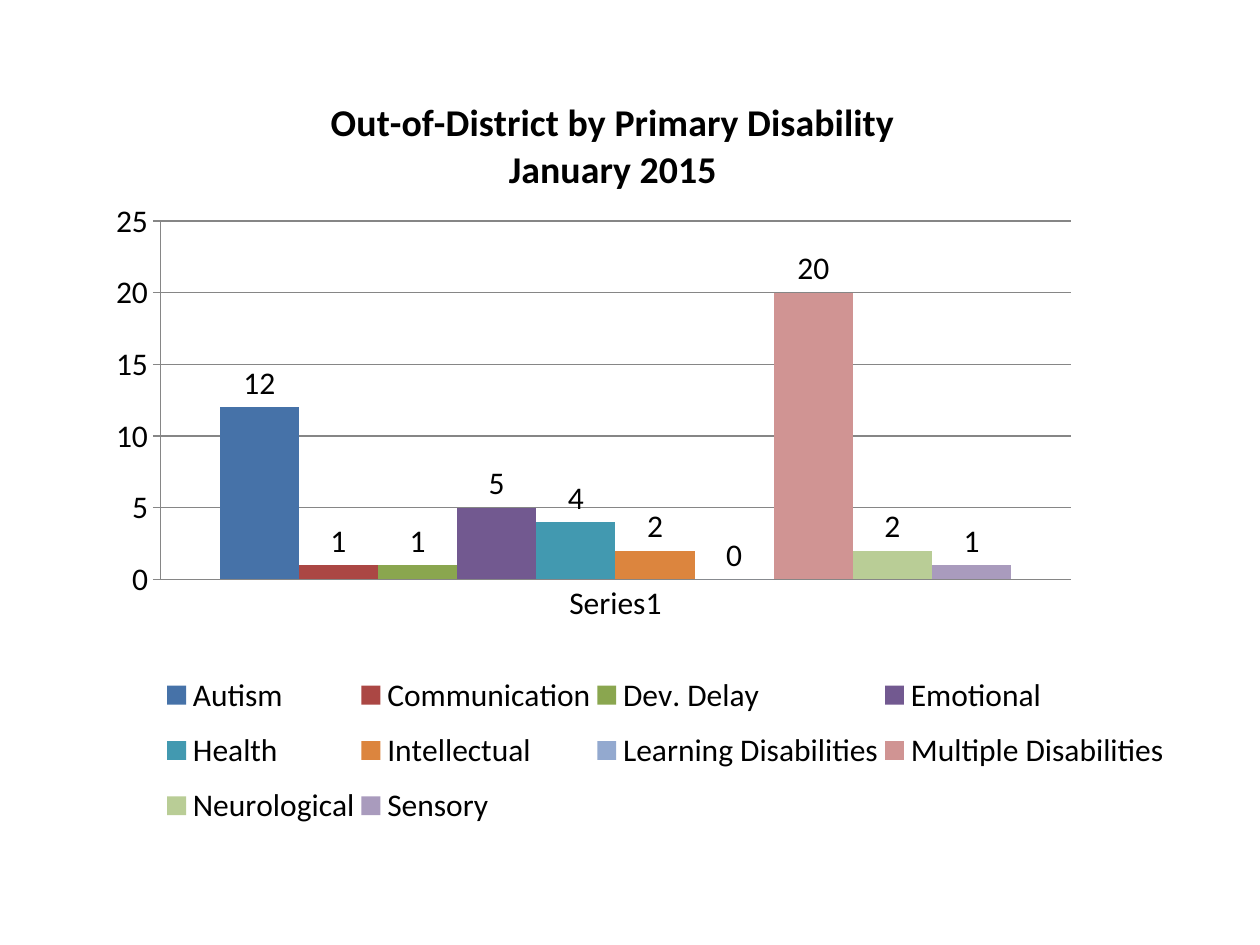
"""Build a slide with a column chart of out-of-district placements by primary disability."""
import lxml.etree
import pptx
import pptx.chart.data
import pptx.dml.color
import pptx.enum.chart
import pptx.oxml.ns
import pptx.util

FONT = "Calibri"
COLORS = {"text": "000000", "line": "868686"}
TITLE_LINES = ["Out-of-District by Primary Disability", "January 2015"]
CATEGORY = "Series1"
DISABILITIES = [
    ("Autism", 12, "4672A8"),
    ("Communication", 1, "AB4744"),
    ("Dev. Delay", 1, "8AA64F"),
    ("Emotional", 5, "725990"),
    ("Health", 4, "4299B0"),
    ("Intellectual", 2, "DC853E"),
    ("Learning Disabilities", 0, "93A9CF"),
    ("Multiple Disabilities", 20, "D09493"),
    ("Neurological", 2, "B9CD96"),
    ("Sensory", 1, "A99BBD"),
]
CHART_AREA = (0.48, 0.49, 8.81, 6.32)
TITLE_LAYOUT = {"xMode": "edge", "yMode": "edge", "x": 0.24, "y": 0.04}
PLOT_LAYOUT = {"layoutTarget": "inner", "xMode": "edge", "yMode": "edge",
               "x": 0.09, "y": 0.2, "w": 0.82, "h": 0.45}
LEGEND_LAYOUT = {"xMode": "edge", "yMode": "edge", "x": 0.09, "y": 0.75, "w": 0.91, "h": 0.23}


def rgb(value):
    return pptx.dml.color.RGBColor.from_string(value)


def style_font(font, size, bold=False):
    font.name = FONT
    font.size = pptx.util.Pt(size)
    font.bold = bold
    font.color.rgb = rgb(COLORS["text"])


def write_line(para, text, **style):
    span = para.add_run()
    span.text = text
    style_font(span.font, **style)


def style_line(line):
    line.color.rgb = rgb(COLORS["line"])
    line.width = pptx.util.Pt(0.75)


def set_layout(element, index, settings):
    qn = pptx.oxml.ns.qn
    for old in element.findall(qn("c:layout")):
        element.remove(old)
    layout = lxml.etree.Element(qn("c:layout"))
    manual = lxml.etree.SubElement(layout, qn("c:manualLayout"))
    for name, value in settings.items():
        lxml.etree.SubElement(manual, qn("c:" + name)).set("val", str(value))
    element.insert(index, layout)


def add_title(chart):
    frame = chart.chart_title.text_frame
    for number, text in enumerate(TITLE_LINES):
        para = frame.add_paragraph() if number else frame.paragraphs[0]
        write_line(para, text, size=21.6, bold=True)
    chart.chart_title.include_in_layout = False
    set_layout(chart.chart_title._element, 1, TITLE_LAYOUT)


def style_axes(chart):
    marks = pptx.enum.chart.XL_TICK_MARK
    chart.category_axis.major_tick_mark = marks.NONE
    chart.category_axis.has_major_gridlines = False
    values = chart.value_axis
    values.major_tick_mark = marks.OUTSIDE
    values.minimum_scale, values.maximum_scale, values.major_unit = 0, 25, 5
    values.has_major_gridlines = True
    for part in (chart.category_axis, values, values.major_gridlines):
        style_line(part.format.line)


def style_columns(plot):
    plot.gap_width = 150
    plot.overlap = 0
    plot.vary_by_categories = False
    for series, (_, _, color) in zip(plot.series, DISABILITIES):
        series.format.fill.solid()
        series.format.fill.fore_color.rgb = rgb(color)
        series.invert_if_negative = False
        labels = series.data_labels
        labels.show_value = True
        labels.position = pptx.enum.chart.XL_LABEL_POSITION.OUTSIDE_END
        style_font(labels.font, 18)


def add_legend(chart):
    chart.has_legend = True
    chart.legend.position = pptx.enum.chart.XL_LEGEND_POSITION.RIGHT
    chart.legend.include_in_layout = False
    style_font(chart.legend.font, 18)
    set_layout(chart.legend._element, 1, LEGEND_LAYOUT)


def main():
    deck = pptx.Presentation()
    deck.slide_width = pptx.util.Inches(10)
    deck.slide_height = pptx.util.Inches(7.5)
    page = deck.slides.add_slide(deck.slide_layouts[6])
    data = pptx.chart.data.CategoryChartData()
    data.categories = [CATEGORY]
    for name, count, _ in DISABILITIES:
        data.add_series(name, [count])
    chart = page.shapes.add_chart(
        pptx.enum.chart.XL_CHART_TYPE.COLUMN_CLUSTERED,
        *map(pptx.util.Inches, CHART_AREA), data).chart
    style_font(chart.font, 18)
    add_title(chart)
    style_axes(chart)
    style_columns(chart.plots[0])
    add_legend(chart)
    set_layout(chart._chartSpace.chart.plotArea, 0, PLOT_LAYOUT)
    deck.save("out.pptx")


if __name__ == "__main__":
    main()
